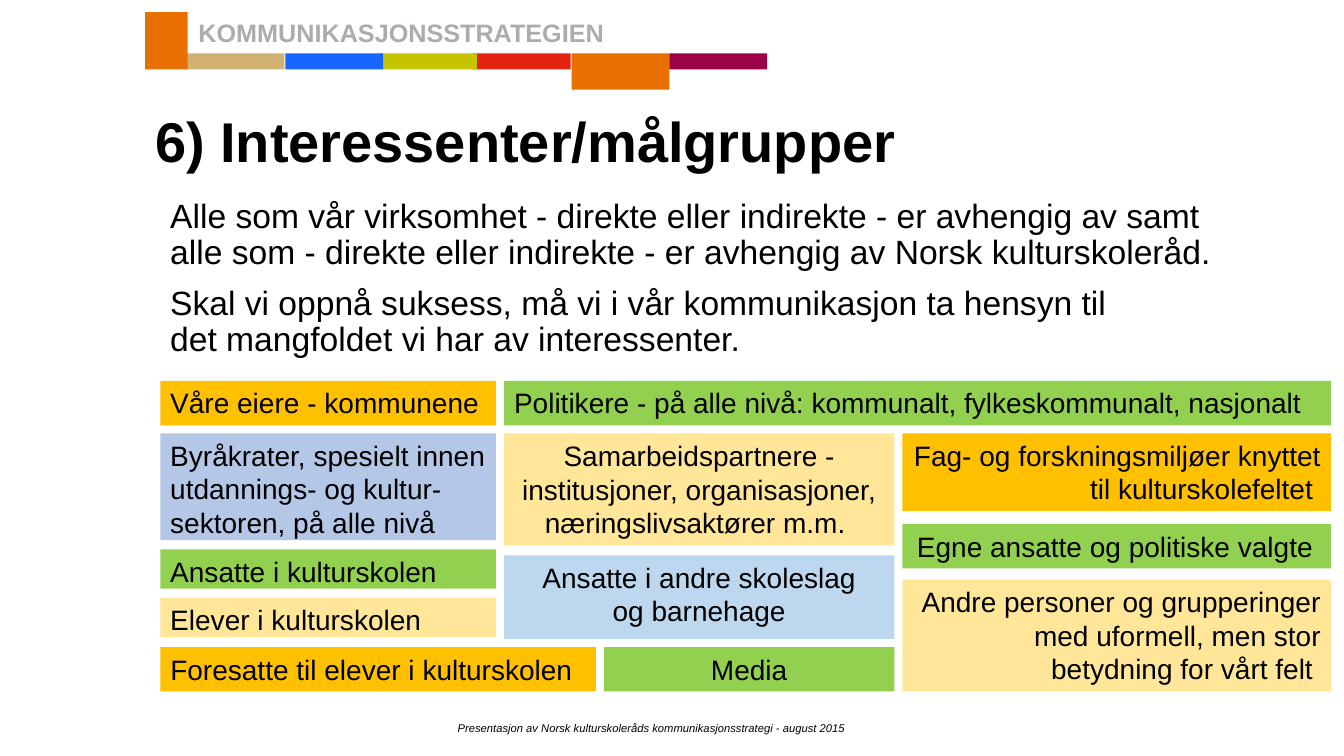
from pptx import Presentation, util as u
from pptx.dml.color import RGBColor
from pptx.enum import shapes, text

WIDTH, HEIGHT = 13.33, 7.5
LEFT, CENTER, RIGHT = text.PP_ALIGN.LEFT, text.PP_ALIGN.CENTER, text.PP_ALIGN.RIGHT
ORANGE, AMBER, GREEN, CREAM = "E87000", "FFC000", "92D050", "FFE699"
GAP = 0.08
COLUMN_EDGES = [0, 3.41, 4.4, 7.36, 11.69]

STRIPES = [
    (3.25, 0.16, "E3220F"), (2.32, 0.16, "C6C400"), (4.23, 0.36, ORANGE),
    (5.2, 0.16, "9D0047"), (0.41, 0.16, "D1B270"), (1.39, 0.16, "1766FF"),
]

# first column, end column, top, height, fill, alignment, paragraphs
STAKEHOLDERS = [
    (0, 1, 0, 0.44, AMBER, LEFT, ["Våre eiere - kommunene"]),
    (1, 4, 0, 0.44, GREEN, LEFT,
     ["Politikere - på alle nivå: kommunalt, fylkeskommunalt, nasjonalt"]),
    (0, 1, 0.52, 1.06, "B4C7E7", LEFT,
     ["Byråkrater, spesielt innen utdannings- og kultur-", "sektoren, på alle nivå"]),
    (1, 3, 0.52, 1.11, CREAM, CENTER,
     ["Samarbeidspartnere - institusjoner, organisasjoner, næringslivsaktører m.m. "]),
    (3, 4, 0.52, 0.77, AMBER, RIGHT,
     ["Fag- og forskningsmiljøer knyttet til kulturskolefeltet "]),
    (0, 1, 1.67, 0.39, GREEN, LEFT, ["Ansatte i kulturskolen"]),
    (0, 1, 2.15, 0.39, CREAM, LEFT, ["Elever i kulturskolen"]),
    (0, 2, 2.64, 0.44, AMBER, LEFT, ["Foresatte til elever i kulturskolen"]),
    (1, 3, 1.73, 0.83, "BDD7EE", CENTER, ["Ansatte i andre skoleslag", "og barnehage"]),
    (2, 3, 2.64, 0.44, GREEN, CENTER, ["Media"]),
    (3, 4, 1.42, 0.44, GREEN, RIGHT, ["Egne ansatte og politiske valgte "]),
    (3, 4, 1.97, 1.11, CREAM, RIGHT,
     ["Andre personer og grupperinger", "med uformell, men stor betydning for vårt felt "]),
]


def color(hex_code):
    """Return the colour for a hex string."""
    return RGBColor.from_string(hex_code)


def add_block(slide, box, fill):
    """Add a plain filled rectangle."""
    block = slide.shapes.add_shape(shapes.MSO_SHAPE.RECTANGLE, *map(u.Inches, box))
    block.shadow.inherit = False
    block.fill.solid()
    block.fill.fore_color.rgb = color(fill)
    block.line.fill.background()
    return block


def write(shape, paragraphs, size, ink="000000", align=LEFT, bold=False, italic=False,
          spacing=1.0, before=0, anchor=text.MSO_ANCHOR.TOP):
    """Fill a shape with formatted paragraphs."""
    frame = shape.text_frame
    frame.text = "\n".join(paragraphs)
    frame.word_wrap = True
    frame.vertical_anchor = anchor
    for index, paragraph in enumerate(frame.paragraphs):
        paragraph.alignment = align
        paragraph.line_spacing = spacing
        paragraph.space_before = u.Pt(before if index else 0)
        for run in paragraph.runs:
            run.font.name = "Arial"
            run.font.size = u.Pt(size)
            run.font.bold = bold
            run.font.italic = italic
            run.font.color.rgb = color(ink)


def add_text(slide, box, paragraphs, size, **style):
    """Add a text box."""
    write(slide.shapes.add_textbox(*map(u.Inches, box)), paragraphs, size, **style)


def add_header(slide, left, top):
    """Draw the colour band and the section name."""
    for offset, height, fill in STRIPES:
        add_block(slide, (left + offset, top + 0.41, 0.97, height), fill)
    add_block(slide, (left, top, 0.42, 0.57), ORANGE)
    add_text(slide, (left + 0.43, top + 0.04, 7.59, 0.4), ["KOMMUNIKASJONSSTRATEGIEN"],
             18, ink="AFABAB", bold=True, spacing=0.9)


def add_introduction(slide, left, top):
    """Place the title and the two introductory paragraphs."""
    add_text(slide, (left, top, 11, 0.7), ["6) Interessenter/målgrupper"], 40,
             bold=True, spacing=0.9, anchor=text.MSO_ANCHOR.MIDDLE)
    add_text(slide, (left + 0.15, top + 0.85, 10.9, 1.71), [
        "Alle som vår virksomhet - direkte eller indirekte - er avhengig av samt "
        "alle som - direkte eller indirekte - er avhengig av Norsk kulturskoleråd.",
        "Skal vi oppnå suksess, må vi i vår kommunikasjon ta hensyn til\v"
        "det mangfoldet vi har av interessenter.",
    ], 24, spacing=0.9, before=10)


def add_stakeholders(slide, left, top):
    """Lay the stakeholder groups out on the column grid."""
    for first, end, offset, height, fill, align, paragraphs in STAKEHOLDERS:
        width = COLUMN_EDGES[end] - COLUMN_EDGES[first] - GAP
        box = (left + COLUMN_EDGES[first], top + offset, width, height)
        write(add_block(slide, box, fill), paragraphs, 20, align=align)


def add_footer(slide, left, top):
    """Place the footer line."""
    add_text(slide, (left, top, 4.5, 0.24),
             ["Presentasjon av Norsk kulturskoleråds kommunikasjonsstrategi - august 2015"],
             8, italic=True)


def main():
    """Build and save the slide."""
    deck = Presentation()
    deck.slide_width, deck.slide_height = u.Inches(WIDTH), u.Inches(HEIGHT)
    slide = deck.slides.add_slide(deck.slide_layouts[6])
    add_header(slide, 1.44, 0.12)
    add_introduction(slide, 1.44, 1.08)
    add_stakeholders(slide, 1.59, 3.78)
    add_footer(slide, 4.44, 7.11)
    deck.save("out.pptx")


if __name__ == "__main__":
    main()
